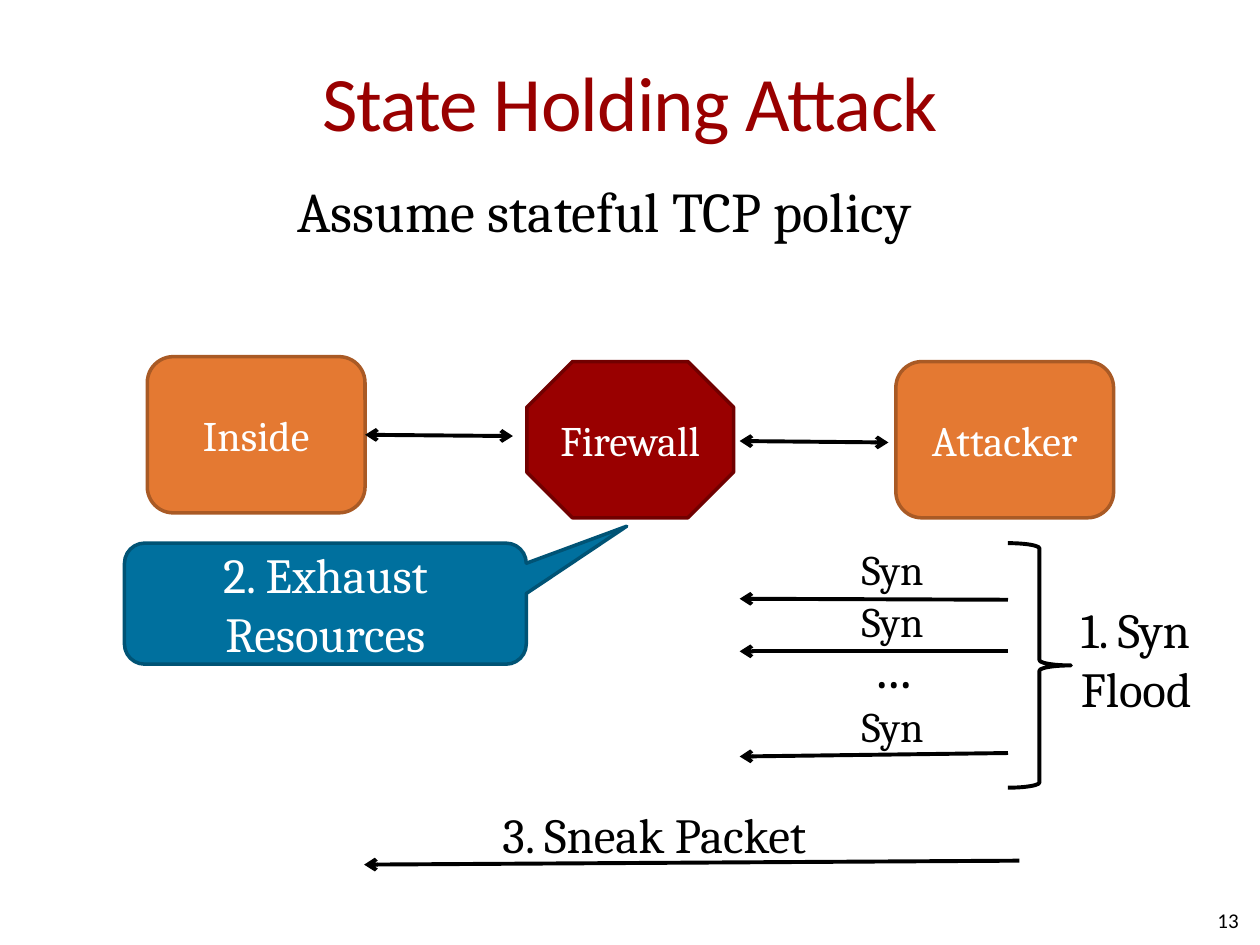
from pptx import Presentation
from pptx import util as u
from pptx.dml.color import RGBColor
from pptx.enum import shapes, text
from pptx.oxml.ns import qn
from lxml import etree

BLACK = RGBColor(0x00, 0x00, 0x00)
WHITE = RGBColor(0xFF, 0xFF, 0xFF)
RED = RGBColor(0x99, 0x00, 0x00)
DARK_RED = RGBColor(0x71, 0x00, 0x00)
ORANGE = RGBColor(0xE4, 0x79, 0x32)
DARK_ORANGE = RGBColor(0xA9, 0x5A, 0x25)
BLUE = RGBColor(0x00, 0x70, 0x9E)
DARK_BLUE = RGBColor(0x00, 0x53, 0x75)

MSO = shapes.MSO_SHAPE
ALIGN = text.PP_ALIGN
ANCHOR = text.MSO_ANCHOR


def place(sp, x, y, w, h):
    sp.left, sp.top, sp.width, sp.height = u.Cm(x), u.Cm(y), u.Cm(w), u.Cm(h)


def write(sp, lines, size, color=BLACK, font="Cambria", align=ALIGN.LEFT,
          anchor=ANCHOR.TOP, wrap=True):
    tf = sp.text_frame
    tf.margin_left = tf.margin_right = tf.margin_top = tf.margin_bottom = 0
    tf.word_wrap = wrap
    tf.vertical_anchor = anchor
    p = tf.paragraphs[0]
    p.alignment = align
    for i, line in enumerate(lines):
        if i:
            p.add_line_break()
        r = p.add_run()
        r.text = line
        r.font.name = font
        r.font.size = u.Pt(size)
        r.font.color.rgb = color
    return p


def add_label(s, x, y, w, h, lines, size):
    sp = s.shapes.add_textbox(u.Cm(x), u.Cm(y), u.Cm(w), u.Cm(h))
    write(sp, lines, size, wrap=False)
    sp.text_frame.auto_size = text.MSO_AUTO_SIZE.SHAPE_TO_FIT_TEXT


def add_box(s, kind, x, y, w, h, label, size, fill, line):
    sp = s.shapes.add_shape(kind, u.Cm(x), u.Cm(y), u.Cm(w), u.Cm(h))
    sp.shadow.inherit = False
    sp.fill.solid()
    sp.fill.fore_color.rgb = fill
    sp.line.color.rgb = line
    sp.line.width = u.Pt(2)
    write(sp, [label], size, WHITE, align=ALIGN.CENTER, anchor=ANCHOR.MIDDLE)
    return sp


def add_arrow(s, x1, y1, x2, y2, both=False):
    cx = s.shapes.add_connector(shapes.MSO_CONNECTOR.STRAIGHT,
                                u.Cm(x1), u.Cm(y1), u.Cm(x2), u.Cm(y2))
    cx.line.color.rgb = BLACK
    cx.line.width = u.Pt(2.25)
    ln = cx.line._get_or_add_ln()
    for end in ["headEnd", "tailEnd"] if both else ["tailEnd"]:
        etree.SubElement(ln, qn("a:" + end), type="arrow")
    etree.SubElement(cx._element.spPr, qn("a:effectLst"))
    return cx


def add_heading(s, x, y, w, h):
    sp = s.shapes.title
    place(sp, x, y, w, h)
    p = write(sp, ["State Holding Attack"], 44, RED, "Calibri",
              ALIGN.CENTER, ANCHOR.MIDDLE)
    p.runs[0]._r.get_or_add_rPr().set("spc", "-50")
    add_label(s, x + 4.72, y + 3.13, 13.39, 1.37,
              ["Assume stateful TCP policy"], 32)


def add_network(s, x, y, w, h):
    box_w, box_h, drop = 4.39, h - 0.1, 0.1
    inside = add_box(s, MSO.ROUNDED_RECTANGLE, x, y, box_w, box_h,
                     "Inside", 24, ORANGE, DARK_ORANGE)
    add_box(s, MSO.OCTAGON, x + 7.65, y + drop, 4.17, box_h,
            "Firewall", 24, RED, DARK_RED)
    add_box(s, MSO.ROUNDED_RECTANGLE, x + w - box_w, y + drop, box_w, box_h,
            "Attacker", 24, ORANGE, DARK_ORANGE)
    cx = add_arrow(s, x + box_w, y + box_h / 2, x + 7.37, y + 1.6, both=True)
    cx.begin_connect(inside, 3)
    add_arrow(s, x + 11.94, y + 1.7, x + 14.94, y + 1.73, both=True)


def add_syn_flood(s, x, y, w, h):
    pitch, arrow_w = 1.06, 5.41
    for row, tilt in [(0, 0.02), (1, 0), (3, -0.07)]:
        top = y + row * pitch
        add_arrow(s, x + arrow_w, top + 1.12 + tilt, x, top + 1.12)
        add_label(s, x + 2.46, top, 1.32, 1.02, ["Syn"], 24)
    add_label(s, x + 2.77, y + 1.8, 0.71, 1.37, ["..."], 32)
    brace = s.shapes.add_shape(MSO.RIGHT_BRACE, u.Cm(x + arrow_w), u.Cm(y),
                               u.Cm(1.27), u.Cm(h))
    brace.shadow.inherit = False
    brace.fill.background()
    brace.line.color.rgb = BLACK
    brace.line.width = u.Pt(2.25)
    add_label(s, x + w - 2.54, y + 1.14, 2.54, 2.39, ["1. Syn", "Flood"], 28)


def add_callout(s, x, y, w, h):
    sp = add_box(s, MSO.ROUNDED_RECTANGULAR_CALLOUT, x, y, w, h,
                 "2. Exhaust Resources", 28, BLUE, DARK_BLUE)
    sp.adjustments[0] = 0.75
    sp.adjustments[1] = -0.64


def add_sneak_packet(s, x, y, w, h):
    add_arrow(s, x + w, y + h - 0.08, x, y + h)
    add_label(s, x + 2.79, y, 6.58, 1.19, ["3. Sneak Packet"], 28)


def add_slide_number(s, x, y, w, h):
    sp = s.shapes.add_textbox(u.Cm(x), u.Cm(y), u.Cm(w), u.Cm(h))
    write(sp, ["13"], 12, font="Calibri", align=ALIGN.RIGHT,
          anchor=ANCHOR.MIDDLE)


def main():
    prs = Presentation()
    prs.slide_width, prs.slide_height = u.Cm(25.4), u.Cm(19.05)
    s = prs.slides.add_slide(prs.slide_layouts[5])
    add_heading(s, 1.27, 0.43, 22.86, 3.18)
    add_slide_number(s, 19.05, 18.03, 5.92, 1.02)
    add_network(s, 2.97, 7.19, 19.48, 3.25)
    add_syn_flood(s, 14.91, 10.95, 9.42, 4.93)
    add_callout(s, 2.51, 10.95, 8.1, 2.44)
    add_sneak_packet(s, 7.34, 16.21, 13.21, 1.22)
    prs.save("out.pptx")


if __name__ == "__main__":
    main()
